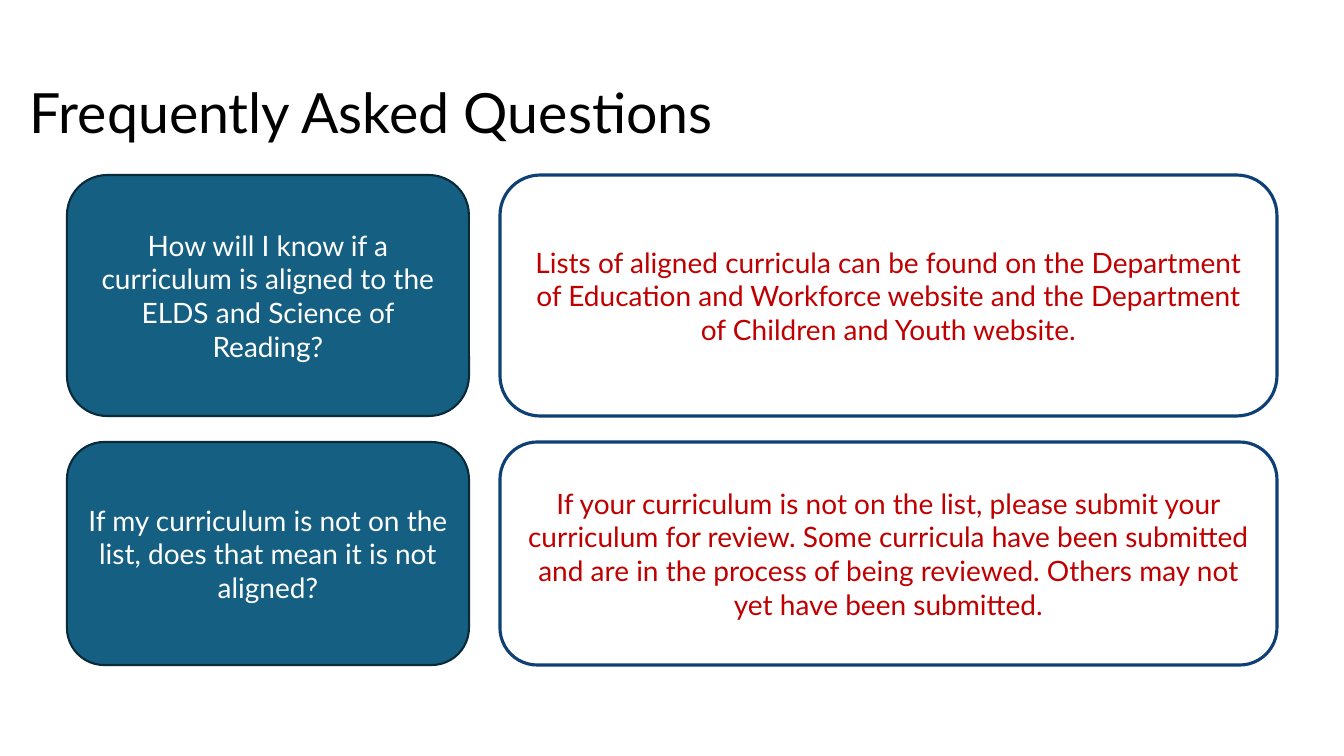
from pptx import Presentation
from pptx.dml.color import RGBColor
from pptx.enum.shapes import MSO_SHAPE as Preset
from pptx.enum.text import MSO_ANCHOR as Anchor, PP_ALIGN as Align
from pptx.util import Emu, Pt

EMU_PER_PX = 914400 / 100.8
SLIDE_SIZE = (1344, 756)

BLACK = RGBColor(0x00, 0x00, 0x00)
WHITE = RGBColor(0xFF, 0xFF, 0xFF)
TEAL = RGBColor(0x15, 0x60, 0x82)
DARK_TEAL = RGBColor(0x09, 0x2A, 0x39)
NAVY = RGBColor(0x0E, 0x3F, 0x75)
RED = RGBColor(0xC0, 0x00, 0x00)

TITLE_BOX = (20, 78, 1342, 75)
TITLE_FONT = {"name": "Lato", "size": Pt(39.6)}
CARD_FONT = {"name": "Lato", "size": Pt(20)}

QUESTION = {"left": 67, "width": 402, "fill": TEAL, "line": DARK_TEAL,
            "line_width": 1.5, "ink": WHITE}
ANSWER = {"left": 500, "width": 777, "fill": WHITE, "line": NAVY,
          "line_width": 2.25, "ink": RED}

# top, height, question, answer
FAQ_ROWS = [
    (175, 241,
     "How will I know if a curriculum is aligned to the ELDS and Science of Reading?",
     "Lists of aligned curricula can be found on the Department of Education and "
     "Workforce website and the Department of Children and Youth website."),
    (442, 223,
     "If my curriculum is not on the list, does that mean it is not aligned?",
     "If your curriculum is not on the list, please submit your curriculum for review. "
     "Some curricula have been submitted and are in the process of being reviewed. "
     "Others may not yet have been submitted."),
]


def px(length):
    return Emu(round(length * EMU_PER_PX))


def write_text(frame, text, font_format, ink, paragraph_format):
    """Fill a wrapped, vertically centred text frame with one paragraph."""
    frame.word_wrap = True
    frame.vertical_anchor = Anchor.MIDDLE
    paragraph = frame.paragraphs[0]
    for attribute, value in paragraph_format.items():
        setattr(paragraph, attribute, value)
    run = paragraph.add_run()
    run.text = text
    for attribute, value in font_format.items():
        setattr(run.font, attribute, value)
    run.font.color.rgb = ink


def add_title(slide, text):
    title = slide.shapes.add_textbox(*map(px, TITLE_BOX))
    write_text(title.text_frame, text, TITLE_FONT, BLACK,
               {"alignment": Align.LEFT, "line_spacing": 0.9})


def add_card(slide, top, height, text, style):
    box = (style["left"], top, style["width"], height)
    card = slide.shapes.add_shape(Preset.ROUNDED_RECTANGLE, *map(px, box))
    card.shadow.inherit = False
    card.fill.solid()
    card.fill.fore_color.rgb = style["fill"]
    card.line.color.rgb = style["line"]
    card.line.width = Pt(style["line_width"])
    write_text(card.text_frame, text, CARD_FONT, style["ink"],
               {"alignment": Align.CENTER})


def main():
    deck = Presentation()
    deck.slide_width, deck.slide_height = map(px, SLIDE_SIZE)
    slide = deck.slides.add_slide(deck.slide_layouts[6])
    add_title(slide, "Frequently Asked Questions")
    for top, height, question, answer in FAQ_ROWS:
        add_card(slide, top, height, question, QUESTION)
        add_card(slide, top, height, answer, ANSWER)
    deck.save("out.pptx")


if __name__ == "__main__":
    main()
